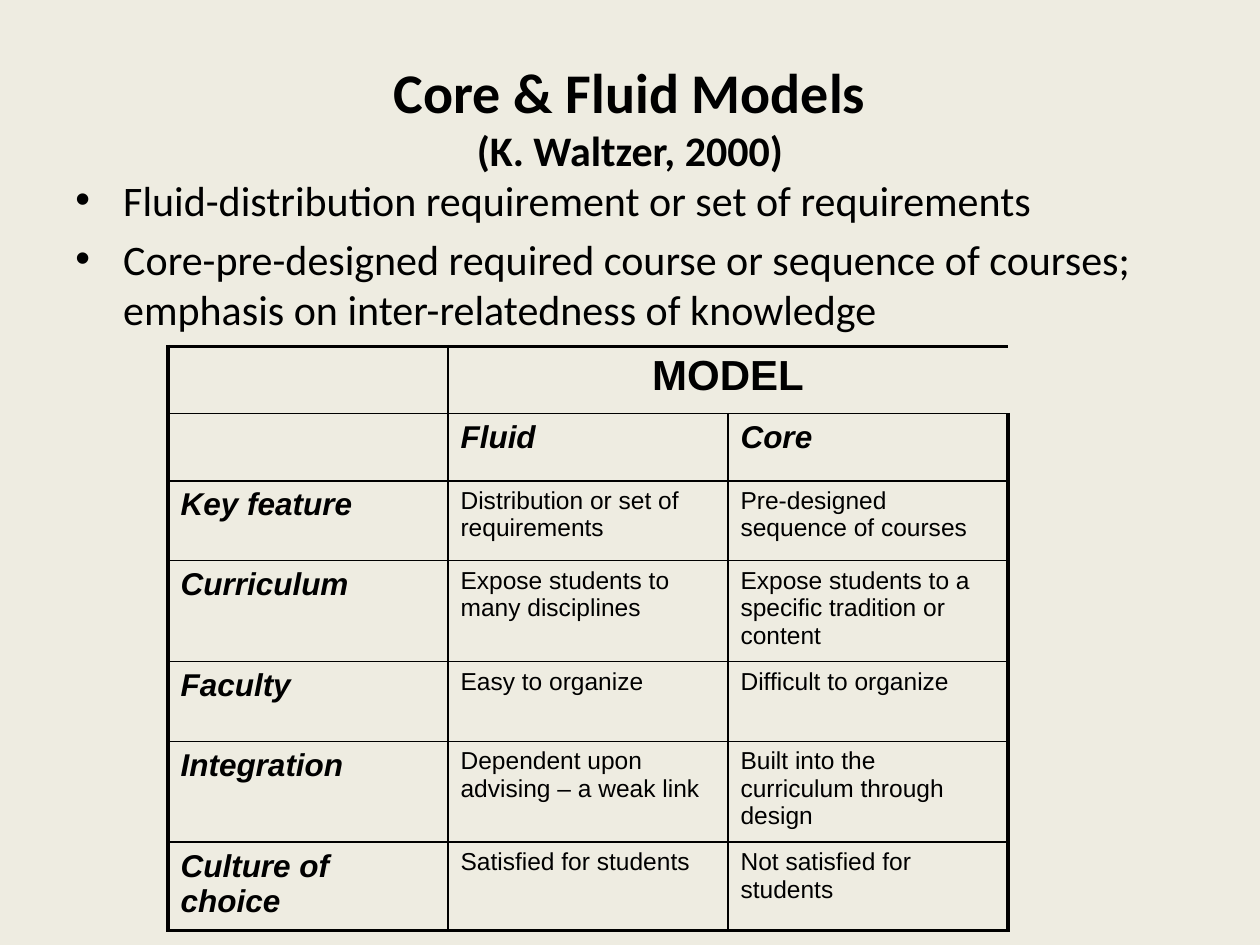
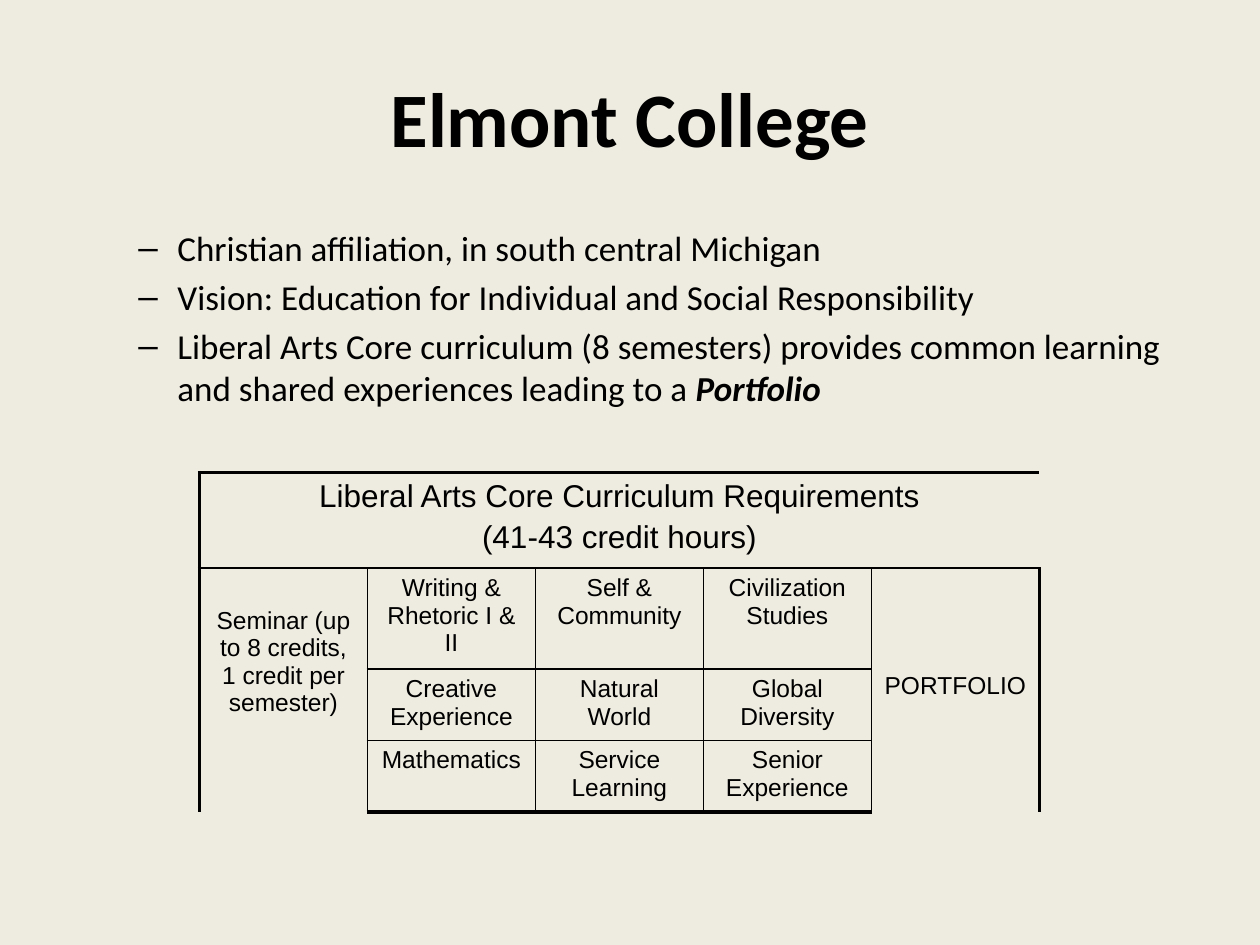
"""Build two slides on general education models, each with a title, bullets and a table."""
import lxml.etree
import pptx
import pptx.dml.color
import pptx.enum.text
import pptx.oxml.ns
import pptx.util

INK = pptx.dml.color.RGBColor(0x00, 0x00, 0x00)
PAPER = pptx.dml.color.RGBColor(0xEE, 0xEC, 0xE1)
CENTER = pptx.enum.text.PP_ALIGN.CENTER
LEFT = pptx.enum.text.PP_ALIGN.LEFT
MIDDLE = pptx.enum.text.MSO_ANCHOR.MIDDLE


class Deck:
    """Hold the shared style and the current slide, on a grid of 120 columns by 90 rows."""

    COLUMNS, ROWS = 120, 90
    HEADING_FONT, TABLE_FONT = "Calibri", "Arial"
    FRAME, RULE = 2.25, 1

    def __init__(self):
        self.prs = pptx.Presentation()
        self.prs.slide_width = pptx.util.Inches(10)
        self.prs.slide_height = pptx.util.Inches(7.5)
        background = self.prs.slide_master.background.fill
        background.solid()
        background.fore_color.rgb = PAPER
        self.slide = None

    def x(self, columns):
        return round(self.prs.slide_width * columns / self.COLUMNS)

    def y(self, rows):
        return round(self.prs.slide_height * rows / self.ROWS)

    def new_slide(self):
        self.slide = self.prs.slides.add_slide(self.prs.slide_layouts[6])

    def text_box(self, top, height):
        box = self.slide.shapes.add_textbox(self.x(6), self.y(top), self.x(108), self.y(height))
        box.text_frame.word_wrap = True
        return box.text_frame

    def run(self, paragraph, text, size, font, bold=False, italic=False):
        run = paragraph.add_run()
        run.text = text
        run.font.size = pptx.util.Pt(size)
        run.font.name = font
        run.font.bold = bold
        run.font.italic = italic
        run.font.color.rgb = INK

    def paragraph(self, frame, index, size, align=LEFT):
        paragraph = frame.add_paragraph() if index else frame.paragraphs[0]
        paragraph.alignment = align
        if index:
            paragraph.space_before = pptx.util.Pt(size * 0.2)
        return paragraph

    def title(self, *lines):
        frame = self.text_box(3.6, 15)
        frame.vertical_anchor = MIDDLE
        heading = self.paragraph(frame, 0, 0, CENTER)
        for index, (text, size) in enumerate(lines):
            if index:
                heading.add_line_break()
            self.run(heading, text, size, self.HEADING_FONT, bold=True)

    def bullets(self, top, items, mark, size, margin, hang):
        frame = self.text_box(top, 59.4)
        for index, (plain, *emphasised) in enumerate(items):
            item = self.paragraph(frame, index, size)
            props = item._p.get_or_add_pPr()
            props.set("marL", str(pptx.util.Inches(margin)))
            props.set("indent", str(-pptx.util.Inches(hang)))
            face = lxml.etree.SubElement(props, pptx.oxml.ns.qn("a:buFont"))
            face.set("typeface", "Arial")
            bullet = lxml.etree.SubElement(props, pptx.oxml.ns.qn("a:buChar"))
            bullet.set("char", mark)
            self.run(item, plain, size, self.HEADING_FONT)
            for text in emphasised:
                self.run(item, text, size, self.HEADING_FONT, bold=True, italic=True)

    def table(self, left, top, columns, heights, merges=()):
        frame = self.slide.shapes.add_table(
            len(heights), columns, self.x(left), self.y(top), self.x(80), self.y(sum(heights)))
        grid = frame.table
        grid.first_row = grid.horz_banding = False
        for column in grid.columns:
            column.width = self.x(80 / columns)
        for row, height in zip(grid.rows, heights):
            row.height = self.y(height)
        regions = {(r, c): (r, c, r, c) for r in range(len(heights)) for c in range(columns)}
        for first_row, first_col, last_row, last_col in merges:
            grid.cell(first_row, first_col).merge(grid.cell(last_row, last_col))
            for r in range(first_row, last_row + 1):
                for c in range(first_col, last_col + 1):
                    regions[r, c] = (first_row, first_col, last_row, last_col)
        for (r, c), (first_row, first_col, last_row, last_col) in regions.items():
            cell = grid.cell(r, c)
            self.border(cell, "L", c == first_col, c == 0)
            self.border(cell, "R", c == last_col, c == columns - 1)
            self.border(cell, "T", r == first_row, r == 0)
            self.border(cell, "B", r == last_row, r == len(heights) - 1)
            cell.fill.background()
        return grid

    def border(self, cell, side, shown, outer):
        line = lxml.etree.SubElement(
            cell._tc.get_or_add_tcPr(), pptx.oxml.ns.qn(f"a:ln{side}"))
        if not shown:
            lxml.etree.SubElement(line, pptx.oxml.ns.qn("a:noFill"))
            return
        line.set("w", str(pptx.util.Pt(self.FRAME if outer else self.RULE)))
        paint = lxml.etree.SubElement(line, pptx.oxml.ns.qn("a:solidFill"))
        lxml.etree.SubElement(paint, pptx.oxml.ns.qn("a:srgbClr")).set("val", str(INK))

    def cell(self, grid, row, column, *lines, size=14, align=LEFT, bold=False, italic=False, drop=0):
        cell = grid.cell(row, column)
        cell.margin_top = pptx.util.Inches(0.05 + drop)
        for index, text in enumerate(lines):
            paragraph = self.paragraph(cell.text_frame, index, size, align)
            self.run(paragraph, text, size, self.TABLE_FONT, bold, italic)


def models_slide(deck):
    deck.new_slide()
    deck.title(("Core & Fluid Models", 32), ("(K. Waltzer, 2000)", 24))
    definitions = [
        ("Fluid-distribution requirement or set of requirements",),
        ("Core-pre-designed required course or sequence of courses; "
         "emphasis on inter-relatedness of knowledge",),
    ]
    deck.bullets(16, definitions, "•", 24, 0.38, 0.38)
    comparison = [
        ("Key feature", "Distribution or set of requirements", "Pre-designed sequence of courses"),
        ("Curriculum", "Expose students to many disciplines",
         "Expose students to a specific tradition or content"),
        ("Faculty", "Easy to organize", "Difficult to organize"),
        ("Integration", "Dependent upon advising – a weak link",
         "Built into the curriculum through design"),
        ("Culture of choice", "Satisfied for students", "Not satisfied for students"),
    ]
    models = deck.table(16, 33, 3, [6.4, 6.4, 7.6, 9.1, 7.6, 9.1, 7.9], [(0, 1, 0, 2)])
    deck.cell(models, 0, 1, "MODEL", size=24, align=CENTER, bold=True)
    for column, model in enumerate(("Fluid", "Core"), 1):
        deck.cell(models, 1, column, model, size=18, bold=True, italic=True)
    for row, (aspect, *traits) in enumerate(comparison, 2):
        deck.cell(models, row, 0, aspect, size=18, bold=True, italic=True)
        for column, trait in enumerate(traits, 1):
            deck.cell(models, row, column, trait)


def college_slide(deck):
    deck.new_slide()
    deck.title(("Elmont College", 44))
    profile = [
        ("Christian affiliation, in south central Michigan",),
        ("Vision: Education for Individual and Social Responsibility",),
        ("Liberal Arts Core curriculum (8 semesters) provides common learning "
         "and shared experiences leading to a ", "Portfolio"),
    ]
    deck.bullets(21, profile, "–", 20, 0.81, 0.31)
    courses = [
        ("Writing & Rhetoric I & II", "Self & Community", "Civilization Studies"),
        ("Creative Experience", "Natural World", "Global Diversity"),
        ("Mathematics", "Service Learning", "Senior Experience"),
    ]
    merges = [(0, 0, 0, 4), (1, 0, 3, 0), (1, 4, 3, 4)]
    requirements = deck.table(19, 45, 5, [9.1, 9.6, 6.8, 6.8], merges)
    deck.cell(requirements, 0, 0, "Liberal Arts Core Curriculum Requirements",
              "(41-43 credit hours)", size=18, align=CENTER)
    deck.cell(requirements, 1, 0, "Seminar (up to 8 credits, 1 credit per semester)",
              align=CENTER, drop=0.26)
    deck.cell(requirements, 1, 4, "PORTFOLIO", align=CENTER, drop=0.78)
    for row, names in enumerate(courses, 1):
        for column, name in enumerate(names, 1):
            deck.cell(requirements, row, column, name, align=CENTER)


def main():
    deck = Deck()
    models_slide(deck)
    college_slide(deck)
    deck.prs.save("out.pptx")


if __name__ == "__main__":
    main()
